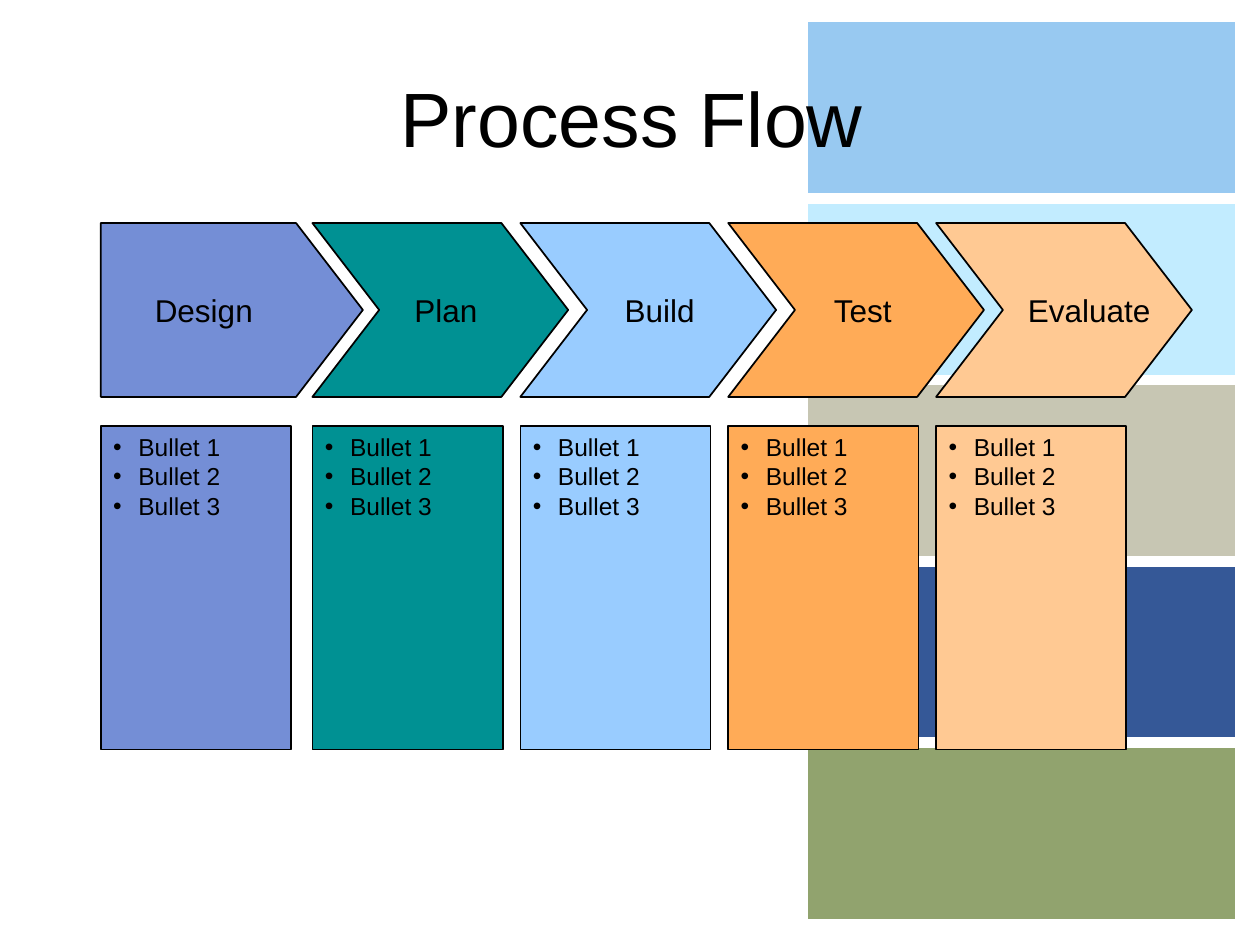
from dataclasses import dataclass
from typing import NamedTuple

from lxml import etree
from pptx import Presentation
from pptx.dml.color import RGBColor
from pptx.enum import shapes, text
from pptx.oxml import ns
from pptx.util import Pt


@dataclass(frozen=True)
class Theme:
    font: str = "Arial"
    ink: str = "000000"
    paper: str = "FFFFFF"
    bands: tuple = ("98C9F1", "C2ECFF", "C7C6B3", "355897", "91A36E")
    title: float = 44
    label: float = 18
    bullet: float = 14
    outline: float = 1
    band_outline: float = 6


class Step(NamedTuple):
    name: str
    color: str
    label_left: float
    label_width: float


THEME = Theme()
STEPS = (
    Step("Design", "748ED6", 81.36, 70.56),
    Step("Plan", "009193", 229.68, 50.4),
    Step("Build", "99CCFF", 349.92, 54.72),
    Step("Test", "FFAB57", 469.44, 49.68),
    Step("Evaluate", "FFC993", 580.32, 84.24),
)
BULLETS = ("Bullet 1", "Bullet 2", "Bullet 3")
FIRST_LEFT, SECOND_LEFT, PITCH = 57.6, 178.56, 118.8
ARROW_TOP, ARROW_HEIGHT, POINT = 127.44, 99.36, 38.16
BOX_TOP, BOX_WIDTH, BOX_HEIGHT = 243.36, 108.72, 185.04
BAND_LEFT, BAND_TOP, BAND_WIDTH, BAND_HEIGHT = 532.08, -63.36, 103.68, 249.84
INDENT = 14.4


def paint(sp, fill: str, line: str, width: float) -> None:
    sp.shadow.inherit = False
    sp.fill.solid()
    sp.fill.fore_color.rgb = RGBColor.from_string(fill)
    sp.line.color.rgb = RGBColor.from_string(line)
    sp.line.width = Pt(width)


def add_run(p, words: str, size: float) -> None:
    r = p.add_run()
    r.text = words
    r.font.name = THEME.font
    r.font.size = Pt(size)
    r.font.color.rgb = RGBColor.from_string(THEME.ink)


def add_bullet(p, words: str) -> None:
    p.alignment = text.PP_ALIGN.LEFT
    pPr = p._p.get_or_add_pPr()
    pPr.set("marL", str(Pt(INDENT)))
    pPr.set("indent", str(-Pt(INDENT)))
    etree.SubElement(pPr, ns.qn("a:buFont")).set("typeface", THEME.font)
    etree.SubElement(pPr, ns.qn("a:buChar")).set("char", "•")
    add_run(p, words, THEME.bullet)


def add_band(s, row: int, color: str) -> None:
    sp = s.shapes.add_shape(
        shapes.MSO_SHAPE.RECTANGLE, Pt(BAND_LEFT), Pt(BAND_TOP + row * BAND_WIDTH),
        Pt(BAND_WIDTH), Pt(BAND_HEIGHT))
    sp.rotation = 270
    paint(sp, color, THEME.paper, THEME.band_outline)


def format_title(s, words: str) -> None:
    title = s.shapes.title
    title.element.getparent().append(title.element)
    title.left, title.top = Pt(38.16), Pt(21.6)
    title.width, title.height = Pt(645.84), Pt(90)
    tf = title.text_frame
    tf.vertical_anchor = text.MSO_ANCHOR.MIDDLE
    p = tf.paragraphs[0]
    p.alignment = text.PP_ALIGN.CENTER
    add_run(p, words, THEME.title)


def add_box(s, left: float, color: str) -> None:
    sp = s.shapes.add_shape(
        shapes.MSO_SHAPE.RECTANGLE, Pt(left), Pt(BOX_TOP), Pt(BOX_WIDTH), Pt(BOX_HEIGHT))
    paint(sp, color, THEME.ink, THEME.outline)
    tf = sp.text_frame
    tf.word_wrap = True
    tf.vertical_anchor = text.MSO_ANCHOR.TOP
    for i, words in enumerate(BULLETS):
        add_bullet(tf.add_paragraph() if i else tf.paragraphs[0], words)


def add_arrow(s, left: float, color: str, is_first: bool) -> None:
    shoulder = left + (111.6 if is_first else 108)
    middle, bottom = ARROW_TOP + ARROW_HEIGHT / 2, ARROW_TOP + ARROW_HEIGHT
    points = [(shoulder, ARROW_TOP), (shoulder + POINT, middle),
              (shoulder, bottom), (left, bottom)]
    if not is_first:
        points.append((left + POINT, middle))
    builder = s.shapes.build_freeform(Pt(left), Pt(ARROW_TOP))
    builder.add_line_segments([(Pt(x), Pt(y)) for x, y in points], close=True)
    paint(builder.convert_to_shape(), color, THEME.ink, THEME.outline)


def add_label(s, step: Step) -> None:
    sp = s.shapes.add_textbox(
        Pt(step.label_left), Pt(162.72), Pt(step.label_width), Pt(28.8))
    tf = sp.text_frame
    tf.word_wrap = False
    tf.auto_size = text.MSO_AUTO_SIZE.SHAPE_TO_FIT_TEXT
    add_run(tf.paragraphs[0], step.name, THEME.label)


def main() -> None:
    prs = Presentation()
    prs.slide_width, prs.slide_height = Pt(720), Pt(540)
    s = prs.slides.add_slide(prs.slide_layouts[5])
    for row, color in enumerate(THEME.bands):
        add_band(s, row, color)
    format_title(s, "Process Flow")
    for i, step in enumerate(STEPS):
        left = SECOND_LEFT + (i - 1) * PITCH if i else FIRST_LEFT
        add_box(s, left, step.color)
        add_arrow(s, left, step.color, i == 0)
        add_label(s, step)
    prs.save("out.pptx")


if __name__ == "__main__":
    main()
